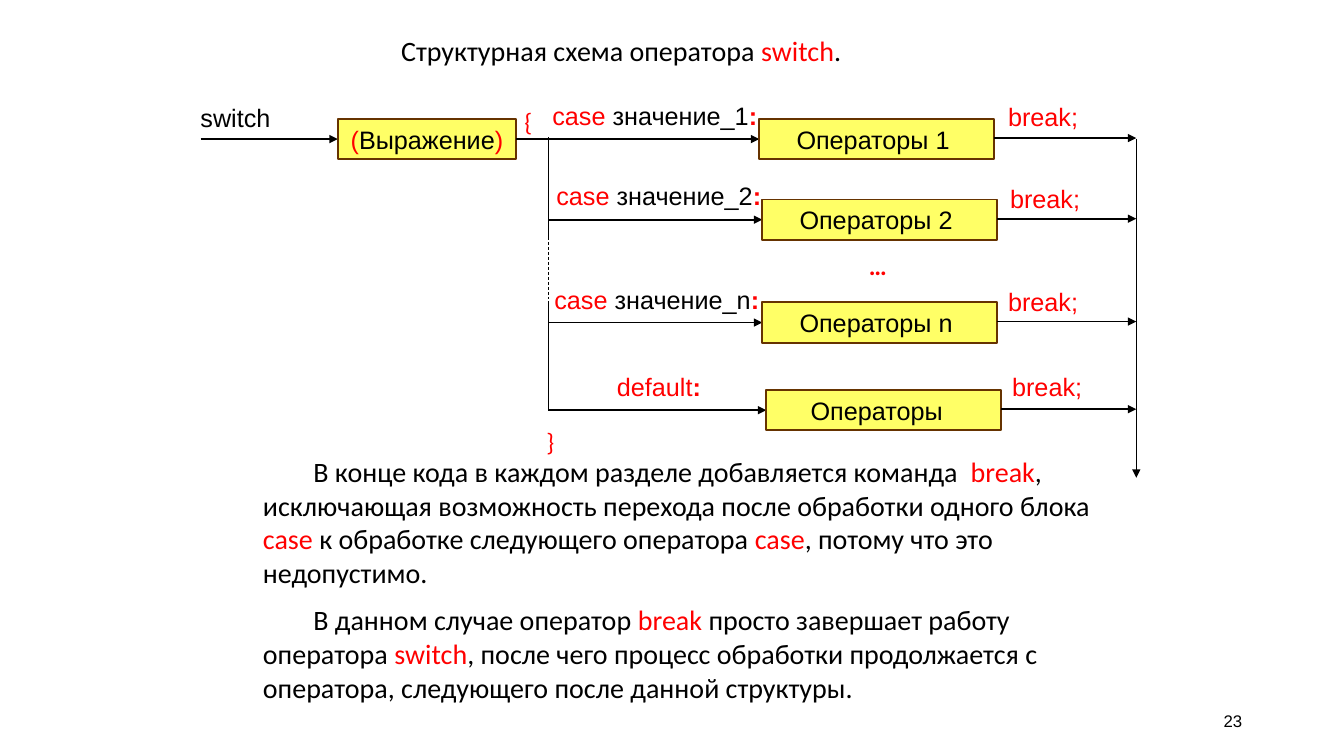
import pptx
import pptx.util
from lxml import etree
from pptx.dml.color import RGBColor
from pptx.enum.dml import MSO_LINE
from pptx.enum.shapes import MSO_CONNECTOR, MSO_SHAPE
from pptx.enum.text import MSO_ANCHOR, PP_ALIGN
from pptx.oxml.ns import qn
from pptx.util import Inches, Pt

BLACK, RED, YELLOW, BROWN = "000000", "FF0000", "FFFF66", "663300"

# A run is (text, colour) or (text, colour, bold)
TITLE = [[("Структурная схема оператора ", BLACK), ("switch", RED), (".", BLACK)]]
NOTES = [
    [("В конце кода в каждом разделе добавляется команда  ", BLACK), ("break", RED),
     (", исключающая возможность перехода после обработки одного блока ", BLACK),
     ("case", RED), (" к обработке следующего оператора ", BLACK), ("case", RED),
     (", потому что это недопустимо.", BLACK)],
    [("В данном случае оператор ", BLACK), ("break", RED),
     (" просто завершает работу оператора ", BLACK), ("switch", RED),
     (", после чего процесс обработки продолжается с оператора, "
      "следующего после данной структуры.", BLACK)],
]
EXPRESSION = [("(", RED), ("Выражение", BLACK), (")", RED)]


def case(value):
    return [("case ", RED), (value, BLACK), (":", RED, True)]


# label, label left, label top, box text, box left, box top, break left, break top
BRANCHES = [
    (case("значение_1"), 5.38, 0.95, "Операторы 1 ", 7.53, 1.18, 9.9, 0.96),
    (case("значение_2"), 5.42, 1.74, "Операторы 2 ", 7.56, 1.98, 9.92, 1.77),
    (case("значение_n"), 5.4, 2.77, "Операторы n ", 7.56, 3, 9.9, 2.79),
    ([("default", RED), (":", RED, True)], 6.02, 3.63, "Операторы  ", 7.6, 3.87, 9.94, 3.63),
]
BOX_W, BOX_H = 2.33, 0.4
EXPR_X, EXPR_Y, EXPR_W = 3.35, 1.18, 1.77
TRUNK_X, EXIT_X = 5.44, 11.27
# top, bottom, width, dash
TRUNK = [(1.36, 2.37, 0.75, None), (2.99, 4.07, 0.75, None),
         (2.3, 2.97, 0.5, MSO_LINE.DASH)]

prs = pptx.Presentation()
prs.slide_width, prs.slide_height = Inches(13.33), Inches(7.5)
s = prs.slides.add_slide(prs.slide_layouts[6])


def rgb(colour):
    return RGBColor.from_string(colour)


def write(sp, paragraphs, size=18, font="Arial", align=PP_ALIGN.LEFT, indent=False):
    tf = sp.text_frame
    tf.word_wrap = True
    for i, runs in enumerate(paragraphs):
        p = tf.add_paragraph() if i else tf.paragraphs[0]
        p.alignment = align
        p.font.size, p.font.name = Pt(size), font
        if indent:
            p.space_before, p.space_after = Pt(4), Pt(6)
            pPr = p._p.get_or_add_pPr()
            pPr.set("marL", "0")
            pPr.set("indent", str(Inches(0.5)))
        for text, colour, *bold in runs:
            r = p.add_run()
            r.text = text
            r.font.color.rgb = rgb(colour)
            if bold:
                r.font.bold = True


def label(x, y, w, h, paragraphs, inset=None, **style):
    sp = s.shapes.add_textbox(Inches(x), Inches(y), Inches(w), Inches(h))
    write(sp, paragraphs, **style)
    tf = sp.text_frame
    if inset is not None:
        tf.margin_left = tf.margin_right = tf.margin_top = tf.margin_bottom = Inches(inset)
    return sp


def box(x, y, w, runs):
    sp = s.shapes.add_shape(MSO_SHAPE.RECTANGLE, Inches(x), Inches(y), Inches(w), Inches(BOX_H))
    sp.shadow.inherit = False
    sp.fill.solid()
    sp.fill.fore_color.rgb = rgb(YELLOW)
    sp.line.color.rgb = rgb(BROWN)
    sp.line.width = Pt(1.25)
    write(sp, [runs], align=PP_ALIGN.CENTER)


def line(x1, y1, x2, y2, width=1.25, arrow=True, dash=None):
    cn = s.shapes.add_connector(MSO_CONNECTOR.STRAIGHT, Inches(x1), Inches(y1),
                                Inches(x2), Inches(y2))
    cn.line.color.rgb = rgb(BLACK)
    cn.line.width = Pt(width)
    if dash:
        cn.line.dash_style = dash
    if arrow:
        etree.SubElement(cn.line._get_or_add_ln(), qn("a:tailEnd"), type="triangle")
    etree.SubElement(cn._element.spPr, qn("a:effectLst"))


number = label(9.42, 6.95, 3, 0.4, [[("23", BLACK)]], size=12, align=PP_ALIGN.RIGHT)
number.text_frame.vertical_anchor = MSO_ANCHOR.MIDDLE
label(3.38, 0.28, 6.35, 0.66, TITLE, size=20, font="Calibri", indent=True)
label(2.51, 4.46, 8.47, 2.83, NOTES, size=20, font="Calibri", indent=True)

label(1.89, 0.97, 1.26, 0.4, [[("switch", BLACK)]])
line(1.99, EXPR_Y + BOX_H / 2, EXPR_X, EXPR_Y + BOX_H / 2)
box(EXPR_X, EXPR_Y, EXPR_W, EXPRESSION)

for i, (runs, label_x, label_y, text, x, y, break_x, break_y) in enumerate(BRANCHES):
    middle = y + BOX_H / 2
    label(label_x, label_y, 2.32, 0.4, [runs])
    line(TRUNK_X if i else EXPR_X + EXPR_W, middle, x, middle)
    box(x, y, BOX_W, [(text, BLACK)])
    line(x + BOX_W, middle - 0.01, EXIT_X, middle - 0.01)
    label(break_x, break_y, 1.26, 0.4, [[("break;", RED)]])

for top, bottom, width, dash in TRUNK:
    line(TRUNK_X, top, TRUNK_X, bottom, width, arrow=False, dash=dash)
line(EXIT_X, 1.38, EXIT_X, 4.74, 0.75)

label(8.52, 2.43, 0.48, 0.4, [[("…", RED, True)]], font="Calibri")
for brace, x, y in [("{", 5.2, 1.05), ("}", 5.42, 4.23)]:
    label(x, y, 0.22, 0.3, [[(brace, RED)]], inset=0, font="Calibri")

prs.save("out.pptx")
